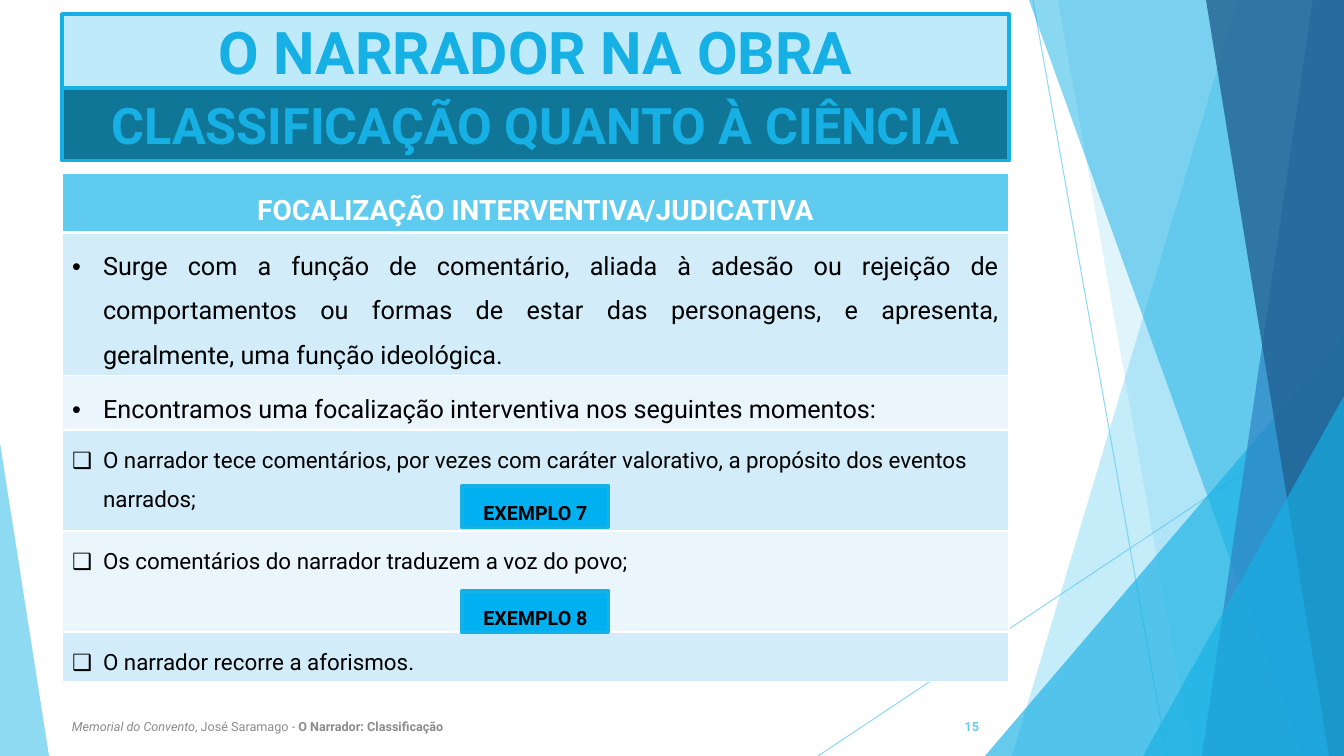
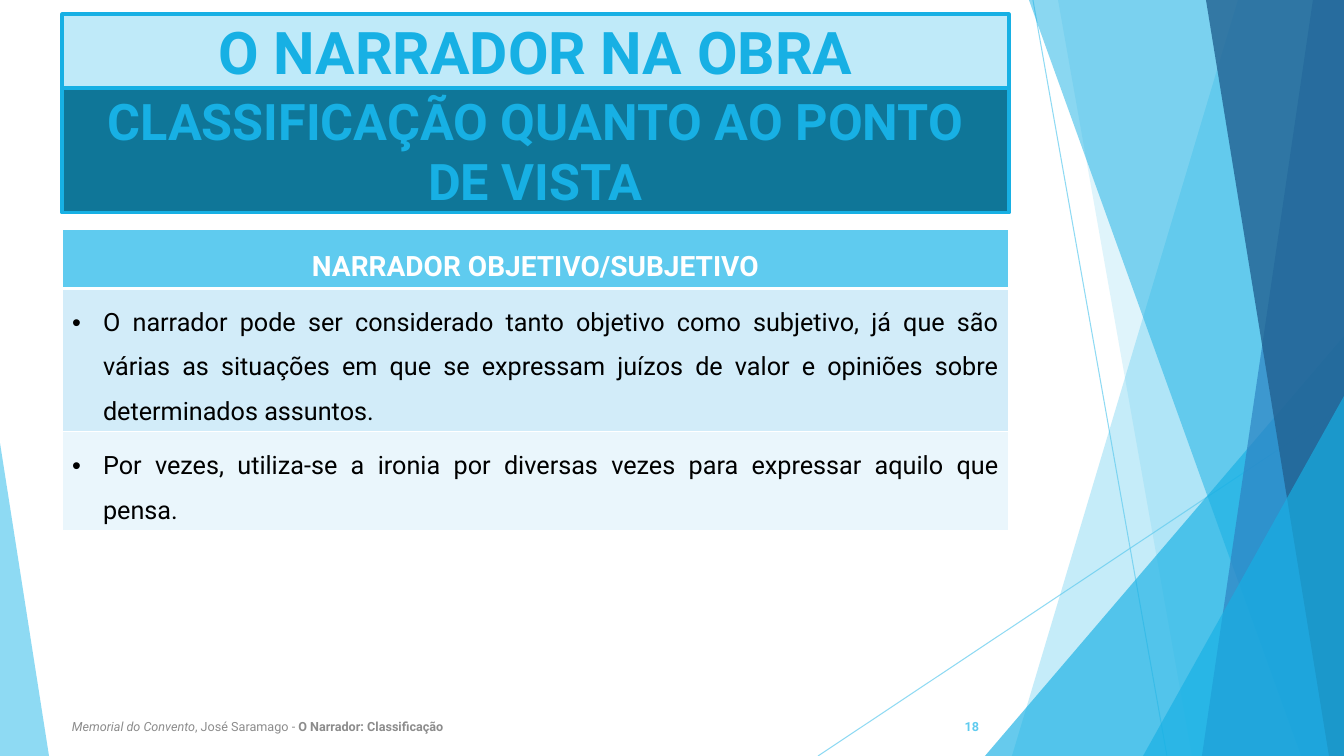
"""Build two slides on the narrator's classification."""
from dataclasses import dataclass

from lxml.etree import SubElement
from pptx import Presentation
from pptx.dml.color import RGBColor
from pptx.enum.shapes import MSO_CONNECTOR, MSO_SHAPE
from pptx.enum.text import MSO_ANCHOR, MSO_AUTO_SIZE, PP_ALIGN
from pptx.oxml import parse_xml
from pptx.oxml.ns import nsdecls, qn
from pptx.util import Emu, Pt

SLIDE_WIDTH, SLIDE_HEIGHT = 1344, 756
EMU_PER_PX = 6858000 / SLIDE_HEIGHT
FONT = "Roboto"

WHITE = RGBColor(0xFF, 0xFF, 0xFF)
BLACK = RGBColor(0x00, 0x00, 0x00)
GREY = RGBColor(0x8C, 0x8C, 0x8C)
SKY = RGBColor(0x5F, 0xCB, 0xEF)
CYAN = RGBColor(0x17, 0xB0, 0xE4)
BLUE = RGBColor(0x2E, 0x83, 0xC3)
NAVY = RGBColor(0x22, 0x62, 0x92)
PALE_CYAN = RGBColor(0xBF, 0xEA, 0xF9)
TEAL = RGBColor(0x0F, 0x76, 0x98)
BUTTON = RGBColor(0x00, 0xB0, 0xF0)
ROW_FILLS = (RGBColor(0xD2, 0xEC, 0xF9), RGBColor(0xEA, 0xF6, 0xFC))

CONTENT_LEFT, CONTENT_WIDTH = 62, 947
TITLE_TOP, TITLE_HEIGHT = 14, 74
HEADER_HEIGHT = 59
FOOTER_TOP, FOOTER_HEIGHT = 707, 40
EXAMPLE_LEFT, EXAMPLE_WIDTH, EXAMPLE_HEIGHT = 462, 147, 42
BULLET_INDENT = 31


@dataclass(frozen=True)
class Span:
    text: str
    size: int
    color: RGBColor
    bold: bool = False
    italic: bool = False


@dataclass(frozen=True)
class Facet:
    """A full-height strip with slanted left edge, reaching the right side."""
    top_x: int
    bottom_x: int
    color: RGBColor
    opacity: int


@dataclass(frozen=True)
class Wedge:
    """A right triangle standing on the slide's bottom edge."""
    left: int
    top: int
    width: int
    apex: int
    color: RGBColor
    opacity: int


@dataclass(frozen=True)
class Ray:
    start: tuple[int, int]
    end: tuple[int, int]


@dataclass(frozen=True)
class Point:
    text: str
    height: int
    size: int = 18
    bullet: str = "•"
    align: PP_ALIGN = PP_ALIGN.LEFT


@dataclass(frozen=True)
class Example:
    text: str
    top: int


@dataclass(frozen=True)
class Topic:
    subtitle: str
    subtitle_height: int
    table_top: int
    heading: str
    points: tuple[Point, ...]
    page: str
    examples: tuple[Example, ...] = ()


BACKDROP = (
    Ray((1033, 0), (1167, 756)),
    Ray((1344, 406), (818, 756)),
    Facet(1238, 1012, SKY, 36),
    Facet(1058, 1192, SKY, 20),
    Wedge(985, 336, 359, 1, CYAN, 66),
    Facet(1029, 1301, CYAN, 50),
    Facet(1313, 1202, BLUE, 70),
    Facet(1206, 1329, NAVY, 80),
    Wedge(1143, 396, 201, 1, CYAN, 66),
    Wedge(0, 443, 49, 0, SKY, 70),
)

FOOTER = (
    Span("Memorial do Convento", 9, GREY, italic=True),
    Span(", José Saramago - ", 9, GREY),
    Span("O Narrador: Classificação", 9, GREY, bold=True),
)

TOPICS = (
    Topic(
        "CLASSIFICAÇÃO QUANTO À CIÊNCIA", 73, 173,
        "FOCALIZAÇÃO INTERVENTIVA/JUDICATIVA",
        (
            Point("Surge com a função de comentário, aliada à adesão ou rejeição de "
                  "comportamentos ou formas de estar das personagens, e apresenta, "
                  "geralmente, uma função ideológica.", 143, align=PP_ALIGN.JUSTIFY),
            Point("Encontramos uma focalização interventiva nos seguintes momentos:", 54),
            Point("O narrador tece comentários, por vezes com caráter valorativo, "
                  "a propósito dos eventos narrados;", 101, 16, "❑"),
            Point("Os comentários do narrador traduzem a voz do povo;", 101, 16, "❑"),
            Point("O narrador recorre a aforismos.", 49, 16, "❑"),
        ),
        "15",
        (Example("EXEMPLO 7", 486), Example("EXEMPLO 8", 591)),
    ),
    Topic(
        "CLASSIFICAÇÃO QUANTO AO PONTO DE VISTA", 125, 229,
        "NARRADOR OBJETIVO/SUBJETIVO",
        (
            Point("O narrador pode ser considerado tanto objetivo como subjetivo, já que "
                  "são várias as situações em que se expressam juízos de valor e opiniões "
                  "sobre determinados assuntos.", 143, align=PP_ALIGN.JUSTIFY),
            Point("Por vezes, utiliza-se a ironia por diversas vezes para expressar "
                  "aquilo que pensa.", 98, align=PP_ALIGN.JUSTIFY),
        ),
        "18",
    ),
)


def px(length: float) -> Emu:
    return Emu(round(length * EMU_PER_PX))


def write(frame, spans, align=PP_ALIGN.LEFT, spacing=1.0):
    """Fill a frame's first paragraph run by run and return it."""
    paragraph = frame.paragraphs[0]
    paragraph.alignment = align
    paragraph.line_spacing = spacing
    for span in spans:
        run = paragraph.add_run()
        run.text = span.text
        font = run.font
        font.name, font.size = FONT, Pt(span.size)
        font.bold, font.italic = span.bold, span.italic
        font.color.rgb = span.color
    return paragraph


def paint_box(box, fill: RGBColor, span: Span, spacing: float = 1.0) -> None:
    box.fill.solid()
    box.fill.fore_color.rgb = fill
    box.line.color.rgb = CYAN
    box.line.width = Pt(2.25)
    frame = box.text_frame
    frame.word_wrap = True
    frame.auto_size = MSO_AUTO_SIZE.NONE
    frame.vertical_anchor = MSO_ANCHOR.MIDDLE
    write(frame, (span,), PP_ALIGN.CENTER, spacing)


def add_box(slide, left: int, top: int, width: int, height: int,
            fill: RGBColor, span: Span, spacing: float = 1.0) -> None:
    box = slide.shapes.add_shape(MSO_SHAPE.RECTANGLE, px(left), px(top), px(width), px(height))
    box.shadow.inherit = False
    paint_box(box, fill, span, spacing)


def add_label(slide, left: int, width: int, spans, align=PP_ALIGN.LEFT) -> None:
    label = slide.shapes.add_textbox(px(left), px(FOOTER_TOP), px(width), px(FOOTER_HEIGHT))
    label.text_frame.word_wrap = True
    label.text_frame.vertical_anchor = MSO_ANCHOR.MIDDLE
    write(label.text_frame, spans, align)


def set_opacity(shape, percent: int) -> None:
    for color in shape.element.xpath("./p:spPr//a:srgbClr"):
        SubElement(color, qn("a:alpha")).set("val", str(percent * 1000))


def draw_ray(slide, ray: Ray):
    line = slide.shapes.add_connector(
        MSO_CONNECTOR.STRAIGHT, *map(px, ray.start), *map(px, ray.end))
    line.line.color.rgb = SKY
    line.line.width = Pt(0.75)
    set_opacity(line, 70)
    SubElement(line.element.spPr, qn("a:effectLst"))
    return line


def draw_facet(slide, part: Facet | Wedge):
    if isinstance(part, Wedge):
        facet = slide.shapes.add_shape(
            MSO_SHAPE.ISOSCELES_TRIANGLE, px(part.left), px(part.top),
            px(part.width), px(SLIDE_HEIGHT - part.top))
        facet.adjustments[0] = part.apex
    else:
        outline = slide.shapes.build_freeform(part.top_x, 0, scale=EMU_PER_PX)
        outline.add_line_segments([
            (SLIDE_WIDTH, 0), (SLIDE_WIDTH, SLIDE_HEIGHT), (part.bottom_x, SLIDE_HEIGHT)])
        facet = outline.convert_to_shape()
    facet.shadow.inherit = False
    facet.fill.solid()
    facet.fill.fore_color.rgb = part.color
    facet.line.fill.background()
    set_opacity(facet, part.opacity)
    return facet


def move_backdrop_to_layout(slide, layout) -> None:
    """Draw the shared backdrop once and hand it to the layout."""
    for part in BACKDROP:
        drawn = draw_ray(slide, part) if isinstance(part, Ray) else draw_facet(slide, part)
        layout.shapes.element.append(drawn.element)


def set_borders(cell, top: int, bottom: int) -> None:
    widths = {"lnL": 1, "lnR": 1, "lnT": top, "lnB": bottom}
    for position, (side, width) in enumerate(widths.items()):
        border = parse_xml(
            f'<a:{side} {nsdecls("a")} w="{Pt(width)}"><a:solidFill>'
            f'<a:srgbClr val="{WHITE}"/></a:solidFill></a:{side}>')
        cell._tc.get_or_add_tcPr().insert(position, border)


def add_bullet(paragraph, bullet: str) -> None:
    properties = paragraph._p.get_or_add_pPr()
    properties.set("marL", str(px(BULLET_INDENT)))
    properties.set("indent", str(-px(BULLET_INDENT)))
    SubElement(properties, qn("a:buFont")).set("typeface", "Arial")
    SubElement(properties, qn("a:buChar")).set("char", bullet)


def add_points_table(slide, topic: Topic) -> None:
    heights = [HEADER_HEIGHT, *(point.height for point in topic.points)]
    table = slide.shapes.add_table(
        len(heights), 1, px(CONTENT_LEFT), px(topic.table_top),
        px(CONTENT_WIDTH), px(sum(heights))).table
    for row, height in zip(table.rows, heights):
        row.height = px(height)

    header = table.cell(0, 0)
    header.fill.solid()
    header.fill.fore_color.rgb = SKY
    header.vertical_anchor = MSO_ANCHOR.MIDDLE
    set_borders(header, 1, 3)
    write(header.text_frame, (Span(topic.heading, 20, WHITE, bold=True),), PP_ALIGN.CENTER, 1.5)

    for index, point in enumerate(topic.points):
        cell = table.cell(index + 1, 0)
        cell.fill.solid()
        cell.fill.fore_color.rgb = ROW_FILLS[index % 2]
        set_borders(cell, 1 if index else 3, 1)
        span = Span(point.text, point.size, BLACK)
        add_bullet(write(cell.text_frame, (span,), point.align, 1.5), point.bullet)


def fill_slide(slide, topic: Topic) -> None:
    title = slide.shapes.title
    title.left, title.top = px(CONTENT_LEFT), px(TITLE_TOP)
    title.width, title.height = px(CONTENT_WIDTH), px(TITLE_HEIGHT)
    paint_box(title, PALE_CYAN, Span("O NARRADOR NA OBRA", 42, CYAN, bold=True))
    add_points_table(slide, topic)
    add_label(slide, CONTENT_LEFT, 695, FOOTER)
    add_label(slide, 913, 76, (Span(topic.page, 9, SKY, bold=True),), PP_ALIGN.RIGHT)
    add_box(slide, CONTENT_LEFT, TITLE_TOP + TITLE_HEIGHT, CONTENT_WIDTH,
            topic.subtitle_height, TEAL, Span(topic.subtitle, 36, CYAN, bold=True))
    for example in topic.examples:
        add_box(slide, EXAMPLE_LEFT, example.top, EXAMPLE_WIDTH, EXAMPLE_HEIGHT,
                BUTTON, Span(example.text, 14, BLACK, bold=True), 1.5)


def main() -> None:
    deck = Presentation()
    deck.slide_width, deck.slide_height = px(SLIDE_WIDTH), px(SLIDE_HEIGHT)
    layout = deck.slide_layouts[5]
    for holder in list(layout.placeholders):
        if holder.placeholder_format.idx:
            layout.shapes.element.remove(holder.element)
    slides = [deck.slides.add_slide(layout) for _ in TOPICS]
    move_backdrop_to_layout(slides[0], layout)
    for slide, topic in zip(slides, TOPICS):
        fill_slide(slide, topic)
    deck.save("out.pptx")


if __name__ == "__main__":
    main()
